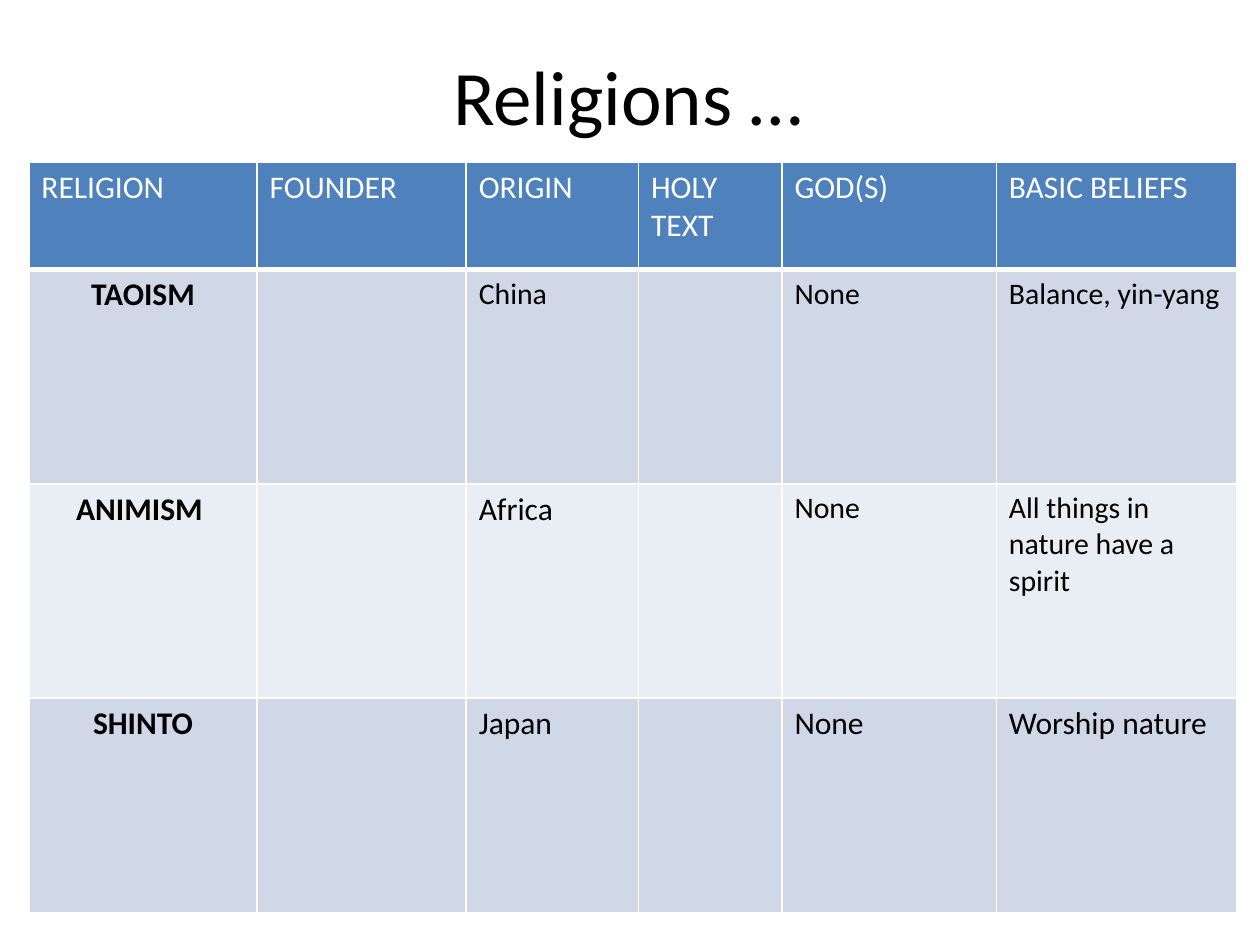
import pptx
import pptx.util
import pptx.dml.color
import pptx.enum.text
import pptx.oxml
import pptx.oxml.ns

Pt = pptx.util.Pt
ALIGN = pptx.enum.text.PP_ALIGN


def style(para, size, color, bold=False):
    para.font.name = "Calibri"
    para.font.size = Pt(size)
    para.font.bold = bold
    para.font.color.rgb = pptx.dml.color.RGBColor.from_string(color)


def edge(cell, bottom):
    props = cell._tc.get_or_add_tcPr()
    sides = [("L", 1), ("R", 1), ("T", 1), ("B", bottom)]
    for spot, (side, width) in enumerate(sides):
        line = pptx.oxml.parse_xml(
            f'<a:ln{side} {pptx.oxml.ns.nsdecls("a")} w="{Pt(width)}">'
            f'<a:solidFill><a:srgbClr val="FFFFFF"/></a:solidFill></a:ln{side}>')
        props.insert(spot, line)


deck = pptx.Presentation()
deck.slide_width = Pt(720)
deck.slide_height = Pt(540)
slide = deck.slides.add_slide(deck.slide_layouts[6])

title = slide.shapes.add_textbox(Pt(34), Pt(13), Pt(650), Pt(82))
frame = title.text_frame
frame.word_wrap = True
frame.vertical_anchor = pptx.enum.text.MSO_ANCHOR.MIDDLE
frame.text = "Religions …"
frame.paragraphs[0].alignment = ALIGN.CENTER
style(frame.paragraphs[0], 44, "000000")

rows = [
    ["RELIGION", "FOUNDER", "ORIGIN", "HOLY TEXT", "GOD(S)", "BASIC BELIEFS"],
    ["TAOISM", "", "China", "", "None", "Balance, yin-yang"],
    ["ANIMISM ", "", "Africa", "", "None", "All things in nature have a spirit"],
    ["SHINTO", "", "Japan", "", "None", "Worship nature"],
]
widths = [130.4, 119.5, 98.5, 82, 122.5, 137.6]
heights = [61.5] + [122.5] * 3
fills = ["4F81BD", "D0D8E8", "E9EDF4", "D0D8E8"]
small = [(1, 2), (1, 4), (1, 5), (2, 4), (2, 5)]

table = slide.shapes.add_table(
    len(rows), len(widths), Pt(16.5), Pt(92.5), Pt(sum(widths)), Pt(sum(heights))).table
table.first_row = False
table.horz_banding = False
for col, width in zip(table.columns, widths):
    col.width = Pt(width)

for r, texts in enumerate(rows):
    head = r == 0
    table.rows[r].height = Pt(heights[r])
    for c, text in enumerate(texts):
        cell = table.cell(r, c)
        cell.text = text
        cell.fill.solid()
        cell.fill.fore_color.rgb = pptx.dml.color.RGBColor.from_string(fills[r])
        edge(cell, 3 if head else 1)
        para = cell.text_frame.paragraphs[0]
        name = c == 0 and not head
        if name:
            para.alignment = ALIGN.CENTER
        style(para, 17 if (r, c) in small else 18, "FFFFFF" if head else "000000", name)

deck.save("out.pptx")
